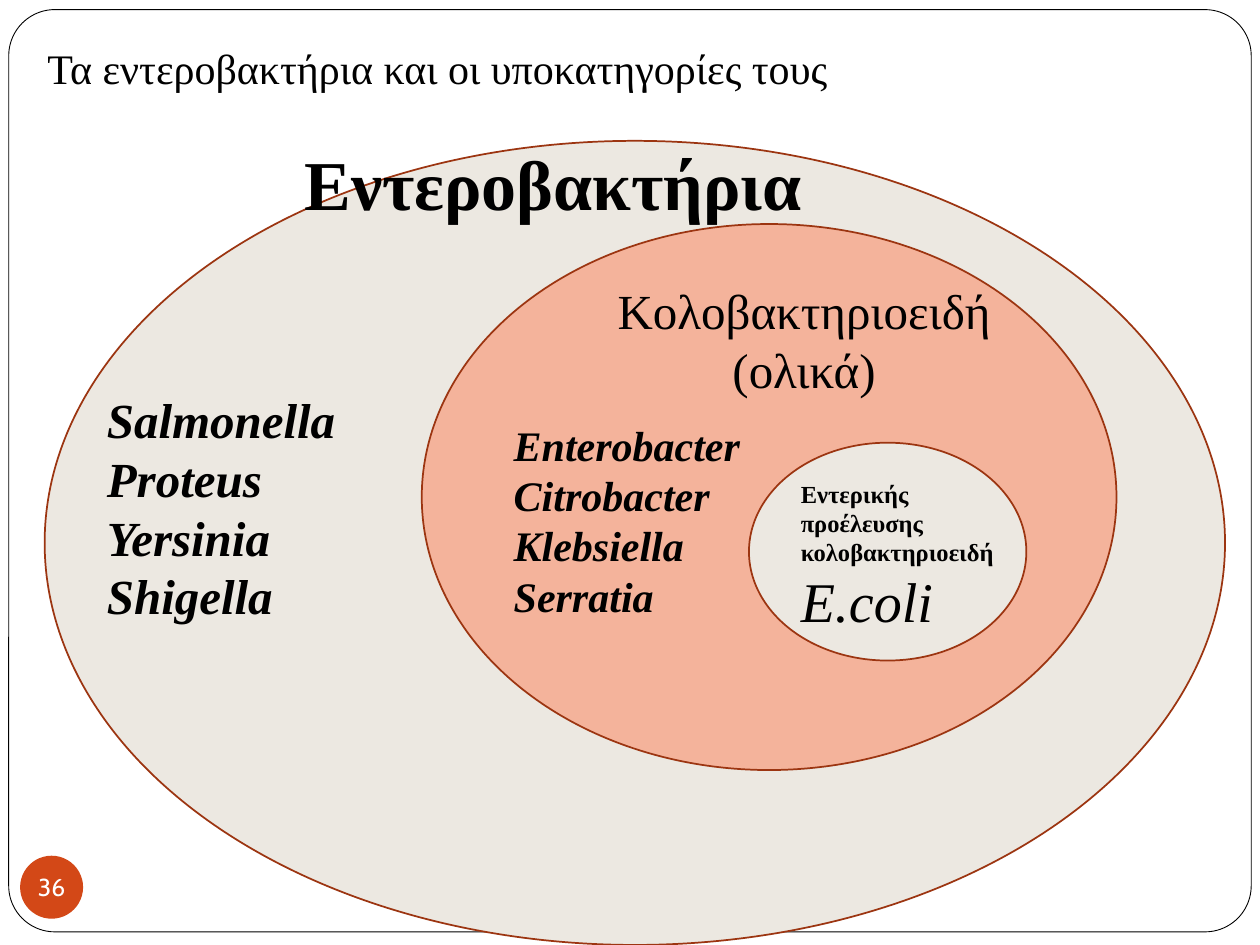
from pptx import Presentation
from pptx.dml.color import RGBColor
from pptx.enum.shapes import MSO_SHAPE
from pptx.enum.text import MSO_ANCHOR, PP_ALIGN
from pptx.util import Pt

SERIF = "Times New Roman"
BLACK, WHITE = "000000", "FFFFFF"
RUST, SAND, SALMON, ORANGE = "9C3511", "ECE8E1", "F4B39B", "D34817"


def color(value):
    """Turn a hex string into a colour."""
    return RGBColor.from_string(value)


def add_outline(page, kind, bounds, fill, line=None, width=1):
    """Add a filled preset shape with an optional border."""
    shape = page.shapes.add_shape(kind, *map(Pt, bounds))
    shape.shadow.inherit = False
    shape.fill.solid()
    shape.fill.fore_color.rgb = color(fill)
    if line:
        shape.line.color.rgb = color(line)
        shape.line.width = Pt(width)
    else:
        shape.line.fill.background()
    return shape


def add_span(para, text, size, bold=False, italic=False, name=SERIF, ink=BLACK):
    """Add one styled run to a paragraph."""
    span = para.add_run()
    span.text = text
    span.font.size = Pt(size)
    span.font.name = name
    span.font.bold = bold
    span.font.italic = italic
    span.font.color.rgb = color(ink)


def add_text(page, bounds, lines, align=PP_ALIGN.LEFT):
    """Add a wrapped text box from (text, size, bold, italic) lines."""
    frame = page.shapes.add_textbox(*map(Pt, bounds)).text_frame
    frame.word_wrap = True
    for index, line in enumerate(lines):
        para = frame.paragraphs[0] if index == 0 else frame.add_paragraph()
        para.alignment = align
        add_span(para, *line)


def add_species(page, bounds, names, size):
    """Add a bold italic list of bacteria."""
    add_text(page, bounds, [(name, size, True, True) for name in names])


def add_page_number(page, bounds, number):
    """Add the round page number badge."""
    frame = add_outline(page, MSO_SHAPE.OVAL, bounds, ORANGE).text_frame
    frame.margin_left = frame.margin_right = 0
    frame.margin_top = frame.margin_bottom = 0
    frame.word_wrap = False
    frame.vertical_anchor = MSO_ANCHOR.MIDDLE
    para = frame.paragraphs[0]
    para.alignment = PP_ALIGN.CENTER
    add_span(para, number, 14, name="Cabin", ink=WHITE)


def main():
    """Build the nested diagram of enterobacteria."""
    deck = Presentation()
    deck.slide_width, deck.slide_height = Pt(720), Pt(540)
    page = deck.slides.add_slide(deck.slide_layouts[6])

    border = add_outline(page, MSO_SHAPE.ROUNDED_RECTANGLE, (5, 5.5, 710, 527), WHITE, BLACK, 0.5)
    border.adjustments[0] = 0.05

    add_outline(page, MSO_SHAPE.OVAL, (25.5, 80.5, 674.5, 459.5), SAND, RUST)
    add_text(page, (167, 77, 329, 55.5), [("Εντεροβακτήρια", 40, True)])
    add_outline(page, MSO_SHAPE.OVAL, (241, 128, 397, 312), SALMON, RUST)
    add_text(page, (332, 157, 255, 97),
             [("Κολοβακτηριοειδή", 28), ("(ολικά)", 28)], PP_ALIGN.CENTER)
    add_outline(page, MSO_SHAPE.OVAL, (428, 253, 158.5, 124.5), SAND, RUST)
    add_text(page, (450.5, 270, 147.5, 97),
             [("Εντερικής προέλευσης κολοβακτηριοειδή", 14, True),
              ("Ε.coli", 32, False, True)])

    add_species(page, (54, 219, 176, 143),
                ["Salmonella", "Proteus", "Yersinia", "Shigella"], 28)
    add_species(page, (286.5, 236, 153, 124),
                ["Enterobacter", "Citrobacter", "Klebsiella", "Serratia"], 24)

    add_text(page, (20, 21, 638, 36), [("Τα εντεροβακτήρια και οι υποκατηγορίες τους", 24)])
    add_page_number(page, (11.5, 489, 36, 36), "36")
    deck.save("out.pptx")


if __name__ == "__main__":
    main()
